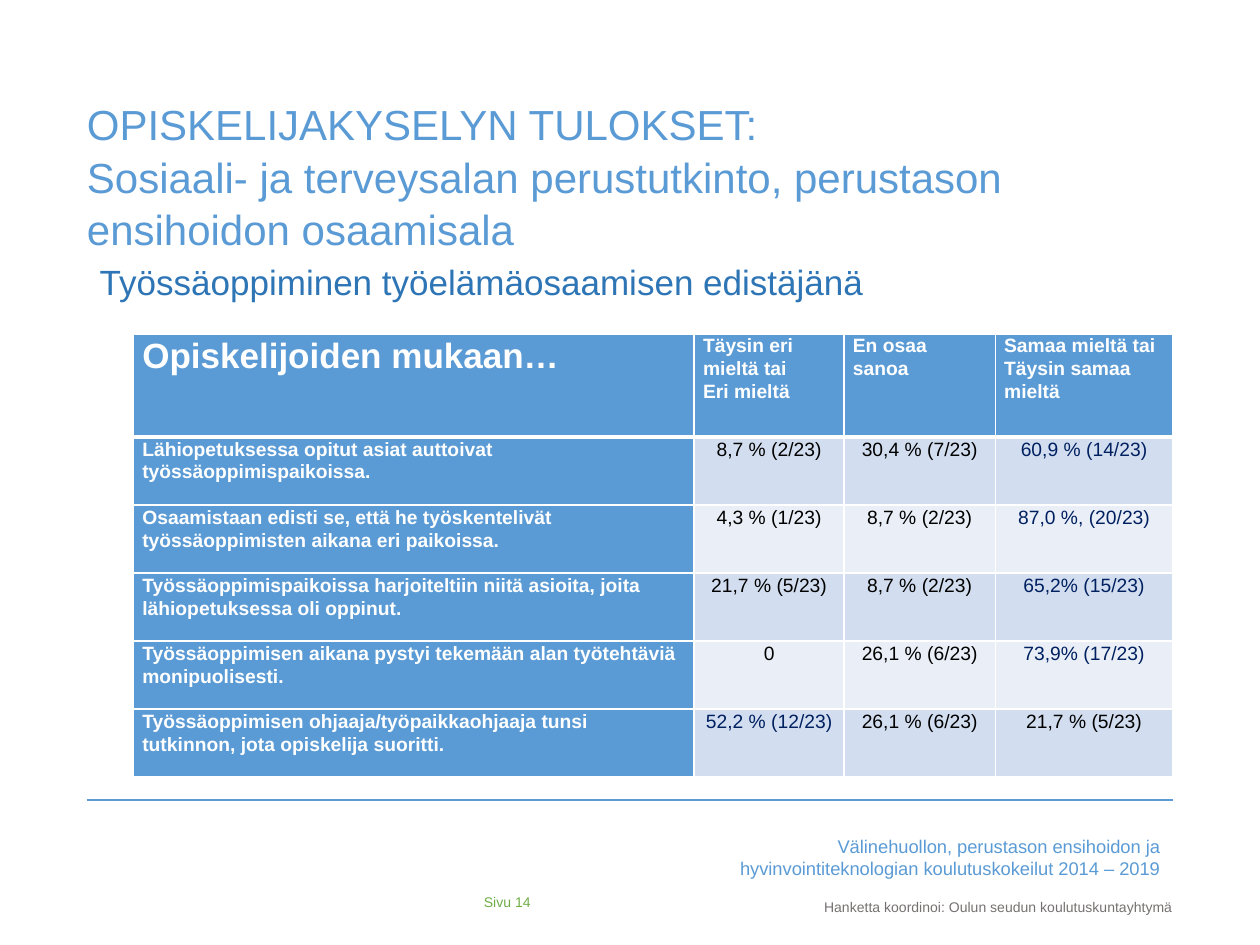
from lxml import etree
from pptx import Presentation
from pptx.dml.color import RGBColor
from pptx.enum.shapes import MSO_CONNECTOR
from pptx.enum.text import MSO_ANCHOR, MSO_AUTO_SIZE, PP_ALIGN
from pptx.oxml.ns import qn
from pptx.util import Inches, Pt

LEFT, CENTER, RIGHT = PP_ALIGN.LEFT, PP_ALIGN.CENTER, PP_ALIGN.RIGHT
TOP, MIDDLE = MSO_ANCHOR.TOP, MSO_ANCHOR.MIDDLE

BLUE = RGBColor(0x5B, 0x9B, 0xD5)
DEEP_BLUE = RGBColor(0x2E, 0x75, 0xB6)
NAVY = RGBColor(0x00, 0x20, 0x60)
GREEN = RGBColor(0x70, 0xAD, 0x47)
GRAY = RGBColor(0x76, 0x71, 0x71)
WHITE = RGBColor(0xFF, 0xFF, 0xFF)
BLACK = RGBColor(0x00, 0x00, 0x00)
BANDS = (RGBColor(0xD2, 0xDE, 0xEF), RGBColor(0xEA, 0xEF, 0xF7))
FONT = "Arial"

# Content
TITLE = ("OPISKELIJAKYSELYN TULOKSET:\v"
         "Sosiaali- ja terveysalan perustutkinto, perustason ensihoidon osaamisala")
SUBTITLE = "Työssäoppiminen työelämäosaamisen edistäjänä"
PROJECT = "Välinehuollon, perustason ensihoidon ja hyvinvointiteknologian koulutuskokeilut 2014 – 2019"
COORDINATOR = "Hanketta koordinoi: Oulun seudun koulutuskuntayhtymä"
PAGE = "Sivu 14"
HEADINGS = ["Opiskelijoiden mukaan…", "Täysin eri mieltä tai\nEri mieltä",
            "En osaa sanoa", "Samaa mieltä tai Täysin samaa mieltä"]
# Statement, three answers, column of the most common answer
RESULTS = [
    ("Lähiopetuksessa opitut asiat auttoivat työssäoppimispaikoissa.",
     "8,7 % (2/23)", "30,4 % (7/23)", "60,9 % (14/23)", 3),
    ("Osaamistaan edisti se, että he työskentelivät työssäoppimisten aikana eri paikoissa.",
     "4,3 % (1/23)", "8,7 % (2/23)", "87,0 %, (20/23)", 3),
    ("Työssäoppimispaikoissa harjoiteltiin niitä asioita, joita lähiopetuksessa oli oppinut.",
     "21,7 % (5/23)", "8,7 % (2/23)", "65,2% (15/23)", 3),
    ("Työssäoppimisen aikana pystyi tekemään alan työtehtäviä monipuolisesti.",
     "0", "26,1 % (6/23)", "73,9% (17/23)", 3),
    ("Työssäoppimisen ohjaaja/työpaikkaohjaaja tunsi tutkinnon, jota opiskelija suoritti.",
     "52,2 % (12/23)", "26,1 % (6/23)", "21,7 % (5/23)", 1),
]

# Layout in inches
MARGIN, CONTENT_W = 0.69, 8.62
COLUMNS = [4.45, 1.19, 1.2, 1.41]
HEADER_H, ROW_H = 0.82, 0.54


def write(frame, text, size, color, bold=False, align=LEFT, spacing=1.0):
    """Fill a text frame, one paragraph per line."""
    frame.text = text
    for paragraph in frame.paragraphs:
        properties = paragraph._p.get_or_add_pPr()
        properties.set("marL", "0")
        properties.set("indent", "0")
        etree.SubElement(properties, qn("a:buNone"))
        paragraph.alignment = align
        paragraph.line_spacing = spacing
        paragraph.space_before = Pt(0)
        font = paragraph.font
        for target in [font] + [run.font for run in paragraph.runs]:
            target.name, target.size, target.bold = FONT, Pt(size), bold
            target.color.rgb = color


def place(shape, left, top, width, height, inset=None, anchor=TOP, wrap=True):
    shape.left, shape.top = Inches(left), Inches(top)
    shape.width, shape.height = Inches(width), Inches(height)
    frame = shape.text_frame
    frame.word_wrap, frame.vertical_anchor = wrap, anchor
    frame.auto_size = MSO_AUTO_SIZE.NONE
    if inset is not None:
        frame.margin_left = frame.margin_right = Inches(inset)
        frame.margin_top = frame.margin_bottom = Inches(inset)
    return frame


def add_box(*box, **options):
    return place(slide.shapes.add_textbox(0, 0, 0, 0), *box, **options)


def style_cell(cell, fill, top=1, bottom=1):
    """White borders first, then the fill, as the schema orders them."""
    cell.margin_left = cell.margin_right = Inches(0.07)
    cell.margin_top = cell.margin_bottom = 0
    properties = cell._tc.get_or_add_tcPr()
    for side, width in (("L", 1), ("R", 1), ("T", top), ("B", bottom)):
        border = etree.SubElement(properties, qn(f"a:ln{side}"), w=str(Pt(width)))
        solid = etree.SubElement(border, qn("a:solidFill"))
        etree.SubElement(solid, qn("a:srgbClr"), val=str(WHITE))
    cell.fill.solid()
    cell.fill.fore_color.rgb = fill


prs = Presentation()
prs.slide_width, prs.slide_height = Inches(10), Inches(7.5)
slide = prs.slides.add_slide(prs.slide_layouts[1])

# Footer
rule = slide.shapes.add_connector(MSO_CONNECTOR.STRAIGHT, Inches(MARGIN), Inches(6.35),
                                  Inches(MARGIN + CONTENT_W), Inches(6.35))
rule.line.color.rgb, rule.line.width = BLUE, Pt(1)
etree.SubElement(rule._element.spPr, qn("a:effectLst"))
write(add_box(5.55, 6.58, 3.76, 0.46), PROJECT, 10.5, BLUE, align=RIGHT)
write(add_box(6.5, 7.09, 2.88, 0.35, inset=0.04, wrap=False), COORDINATOR, 8, GRAY)
write(add_box(3.84, 7.04, 1.18, 0.23, inset=0, anchor=MIDDLE), PAGE, 8, GREEN)

# Title and subtitle
title = place(slide.shapes.title, MARGIN, 0.76, CONTENT_W, 1.18, inset=0)
write(title, TITLE, 24, BLUE, spacing=1.05)
subtitle = place(slide.placeholders[1], MARGIN, 2.02, CONTENT_W, 3.86)
write(subtitle, SUBTITLE, 20, DEEP_BLUE)

# Results table
table = slide.shapes.add_table(
    len(RESULTS) + 1, len(COLUMNS), Inches(1.06), Inches(2.65),
    Inches(sum(COLUMNS)), Inches(HEADER_H + ROW_H * len(RESULTS))).table
for column, width in zip(table.columns, COLUMNS):
    column.width = Inches(width)
for i, row in enumerate(table.rows):
    row.height = Inches(ROW_H if i else HEADER_H)

for c, heading in enumerate(HEADINGS):
    cell = table.cell(0, c)
    style_cell(cell, BLUE, bottom=3)
    write(cell.text_frame, heading, 11 if c else 20, WHITE, bold=True, spacing=1.07)

for r, (*texts, most_common) in enumerate(RESULTS, start=1):
    for c, text in enumerate(texts):
        cell = table.cell(r, c)
        style_cell(cell, BANDS[(r - 1) % 2] if c else BLUE, top=3 if r == 1 else 1)
        if c:
            color = NAVY if c == most_common else BLACK
            write(cell.text_frame, text, 11, color, align=CENTER, spacing=1.07)
        else:
            write(cell.text_frame, text, 11, WHITE, bold=True, spacing=1.07)

prs.save("out.pptx")
